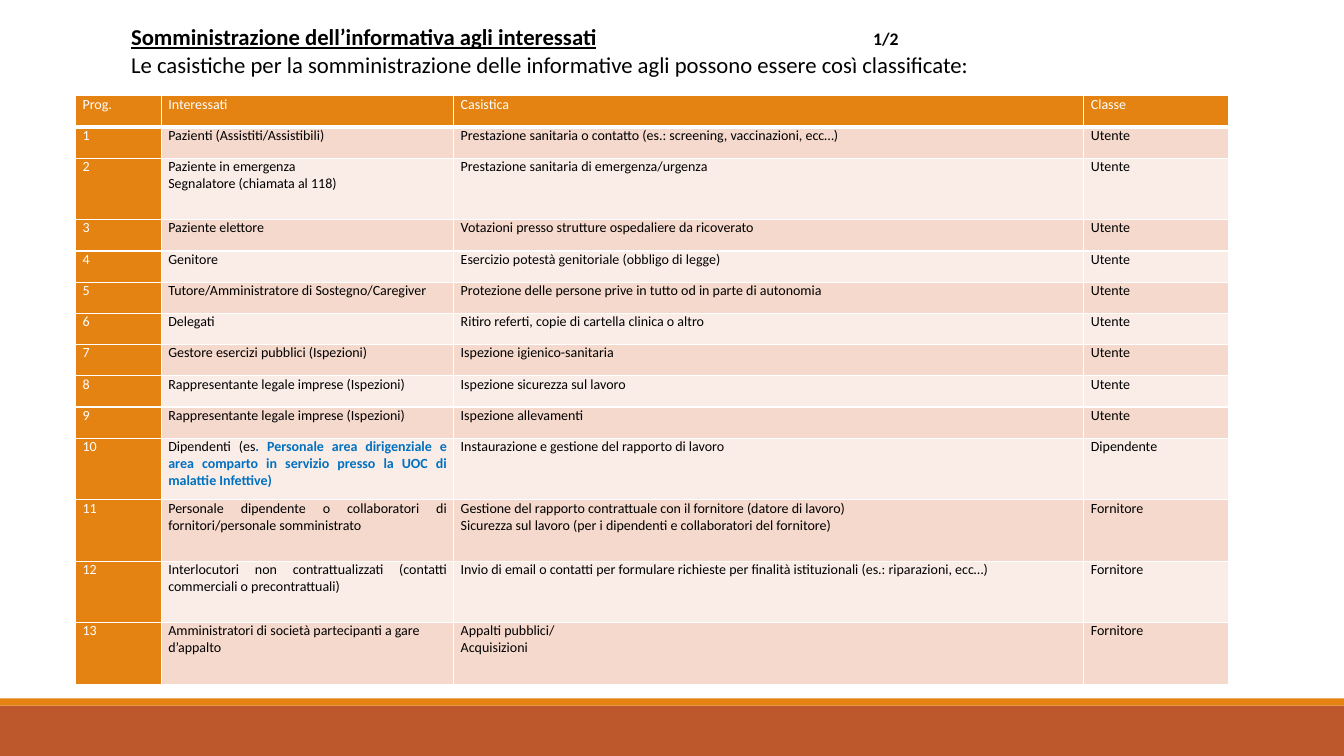
from lxml.etree import SubElement
from pptx import Presentation
from pptx.dml.color import RGBColor
from pptx.enum.shapes import MSO_SHAPE
from pptx.enum.text import MSO_ANCHOR, MSO_AUTO_SIZE, PP_ALIGN
from pptx.oxml.ns import qn
from pptx.util import Inches, Pt

FONT = "Calibri"
BLACK, WHITE, BLUE = "000000", "FFFFFF", "0070C0"
ORANGE, RUST = "E48312", "BD582C"
BANDS = ["F5D9CC", "FAEDE7"]
COLUMN_WIDTHS = [0.85, 2.9, 6.25, 1.44]
ROW_HEIGHT, TALL_ROW_HEIGHT = 0.31, 0.61
TALL_ROWS = {2, 10, 11, 12, 13}
HEADERS = ["Prog.", "Interessati", "Casistica", "Classe"]
HIGHLIGHT = ". Personale area dirigenziale e area comparto in servizio presso la UOC di malattie Infettive)"
HIGHLIGHTED_ROW, LEFT_ALIGNED_ROW = 10, 13
CASES = [
    ("Pazienti (Assistiti/Assistibili)",
     "Prestazione sanitaria o contatto (es.: screening, vaccinazioni, ecc…)", "Utente"),
    ("Paziente in emergenza\nSegnalatore (chiamata al 118)",
     "Prestazione sanitaria di emergenza/urgenza", "Utente"),
    ("Paziente elettore", "Votazioni presso strutture ospedaliere da ricoverato", "Utente"),
    ("Genitore", "Esercizio potestà genitoriale (obbligo di legge)", "Utente"),
    ("Tutore/Amministratore di Sostegno/Caregiver",
     "Protezione delle persone prive in tutto od in parte di autonomia", "Utente"),
    ("Delegati", "Ritiro referti, copie di cartella clinica o altro", "Utente"),
    ("Gestore esercizi pubblici (Ispezioni)", "Ispezione igienico-sanitaria", "Utente"),
    ("Rappresentante legale imprese (Ispezioni)", "Ispezione sicurezza sul lavoro", "Utente"),
    ("Rappresentante legale imprese (Ispezioni)", "Ispezione allevamenti", "Utente"),
    ("Dipendenti (es", "Instaurazione e gestione del rapporto di lavoro", "Dipendente"),
    ("Personale dipendente o collaboratori di fornitori/personale somministrato",
     "Gestione del rapporto contrattuale con il fornitore (datore di lavoro)\n"
     "Sicurezza sul lavoro (per i dipendenti e collaboratori del fornitore)", "Fornitore"),
    ("Interlocutori non contrattualizzati (contatti commerciali o precontrattuali)",
     "Invio di email o contatti per formulare richieste per finalità istituzionali "
     "(es.: riparazioni, ecc…)", "Fornitore"),
    ("Amministratori di società partecipanti a gare d’appalto",
     "Appalti pubblici/\nAcquisizioni", "Fornitore"),
]


def color(value):
    return RGBColor.from_string(value)


def add_bar(slide, top, height, fill):
    shape = slide.shapes.add_shape(
        MSO_SHAPE.RECTANGLE, 0, Inches(top), Inches(13.33), Inches(height))
    shape.shadow.inherit = False
    shape.fill.solid()
    shape.fill.fore_color.rgb = color(fill)
    shape.line.fill.background()


def add_run(paragraph, text, size, bold=False, underline=False, text_color=BLACK):
    run = paragraph.add_run()
    run.text = text
    run.font.name = FONT
    run.font.size = Pt(size)
    run.font.bold = bold
    run.font.underline = underline
    run.font.color.rgb = color(text_color)


def add_tab_stop(paragraph, position):
    tabs = SubElement(paragraph._p.get_or_add_pPr(), qn("a:tabLst"))
    SubElement(tabs, qn("a:tab"), pos=str(Inches(position)), algn="l")


def fill_title(slide):
    title = slide.shapes.title
    title.left, title.top = Inches(1.2), Inches(0.31)
    title.width, title.height = Inches(11), Inches(0.51)
    frame = title.text_frame
    frame.auto_size = MSO_AUTO_SIZE.NONE
    frame.word_wrap = True
    frame.vertical_anchor = MSO_ANCHOR.BOTTOM
    paragraph = frame.paragraphs[0]
    paragraph.alignment = PP_ALIGN.LEFT
    add_tab_stop(paragraph, 7.36)
    add_run(paragraph, "Somministrazione dell’informativa agli interessati", 16.2, True, True)
    add_run(paragraph, "\t1/2", 12.6, True)
    paragraph.add_line_break()
    add_run(paragraph, "Le casistiche per la somministrazione delle informative agli "
            "possono essere così classificate:", 16.2)


def set_borders(cell, bottom_width):
    properties = cell._tc.get_or_add_tcPr()
    for side, width in (("L", 1), ("R", 1), ("T", 1), ("B", bottom_width)):
        line = SubElement(properties, qn(f"a:ln{side}"), w=str(Pt(width)))
        SubElement(SubElement(line, qn("a:solidFill")), qn("a:srgbClr"), val=WHITE)


def fill_cell(cell, text, fill, text_color, alignment, bottom_width):
    set_borders(cell, bottom_width)
    cell.fill.solid()
    cell.fill.fore_color.rgb = color(fill)
    cell.margin_left = cell.margin_right = Inches(0.07)
    cell.margin_top = cell.margin_bottom = 0
    cell.vertical_anchor = MSO_ANCHOR.TOP
    cell.text_frame.text = text
    for paragraph in cell.text_frame.paragraphs:
        paragraph.alignment = alignment
        paragraph.font.name = FONT
        paragraph.font.size = Pt(10)
        paragraph.font.bold = False
        paragraph.font.color.rgb = color(text_color)


def add_case_table(slide):
    rows = [HEADERS] + [(str(number), *case) for number, case in enumerate(CASES, 1)]
    heights = [TALL_ROW_HEIGHT if index in TALL_ROWS else ROW_HEIGHT
               for index in range(len(rows))]
    table = slide.shapes.add_table(
        len(rows), len(HEADERS), Inches(0.75), Inches(0.95),
        Inches(sum(COLUMN_WIDTHS)), Inches(sum(heights))).table
    for column, width in zip(table.columns, COLUMN_WIDTHS):
        column.width = Inches(width)
    for row_index, (texts, height) in enumerate(zip(rows, heights)):
        table.rows[row_index].height = Inches(height)
        for column_index, text in enumerate(texts):
            is_heading = row_index == 0 or column_index == 0
            is_justified = (not is_heading and column_index < 3
                            and row_index != LEFT_ALIGNED_ROW)
            fill_cell(
                table.cell(row_index, column_index), text,
                ORANGE if is_heading else BANDS[(row_index - 1) % 2],
                WHITE if is_heading else BLACK,
                PP_ALIGN.JUSTIFY if is_justified else PP_ALIGN.LEFT,
                3 if row_index == 0 else 1)
    highlighted = table.cell(HIGHLIGHTED_ROW, 1).text_frame.paragraphs[0]
    add_run(highlighted, HIGHLIGHT, 10, True, text_color=BLUE)


def main():
    presentation = Presentation()
    presentation.slide_width = Inches(13.33)
    presentation.slide_height = Inches(7.5)
    slide = presentation.slides.add_slide(presentation.slide_layouts.get_by_name("Title Only"))
    add_bar(slide, 7, 0.5, RUST)
    add_bar(slide, 6.93, 0.07, ORANGE)
    fill_title(slide)
    add_case_table(slide)
    presentation.save("out.pptx")


if __name__ == "__main__":
    main()
